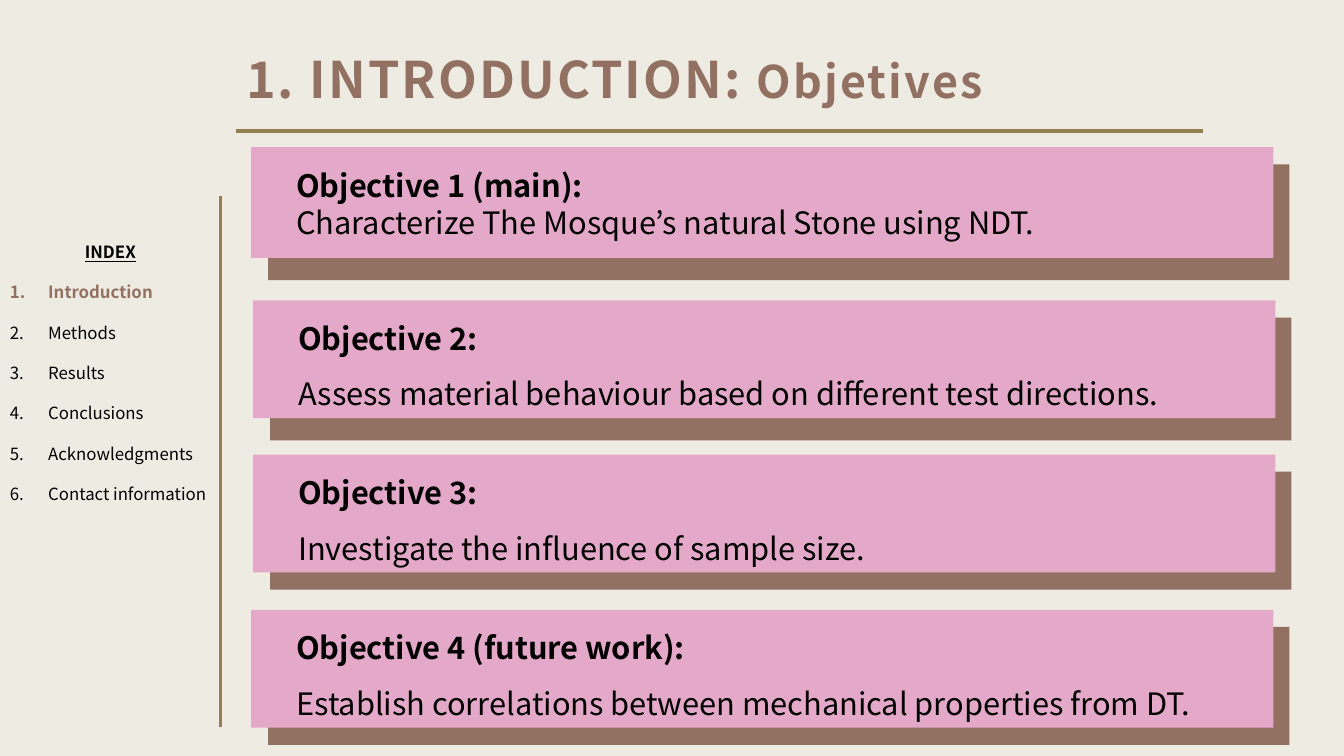
from lxml import etree
from pptx import Presentation, util as u
from pptx.dml.color import RGBColor
from pptx.enum import shapes, text
from pptx.oxml.ns import qn

HUES = {"back": "EEEBE2", "brown": "927162", "pink": "E4A9C9",
        "gold": "947F53", "ink": "000000"}
FONT = "Noto Sans CJK JP"
INDEX = ["Introduction", "Methods", "Results", "Conclusions",
         "Acknowledgments", "Contact information"]
GOALS = [
    (2.49, 1.46, 1.1, 1.15, 1, "Objective 1 (main):",
     "Characterize The Mosque’s natural Stone using NDT."),
    (2.51, 2.98, 1.17, 1.22, 1.5, "Objective 2:",
     "Assess material behaviour based on different test directions."),
    (2.51, 4.51, 1.17, 1.17, 1.5, "Objective 3:",
     "Investigate the influence of sample size."),
    (2.49, 6.05, 1.17, 1.17, 1.5, "Objective 4 (future work):",
     "Establish correlations between mechanical properties from DT."),
]


def hue(name):
    """Return the named colour."""
    return RGBColor.from_string(HUES[name])


def put(item, **values):
    """Set each given attribute on an item."""
    for key, value in values.items():
        setattr(item, key, value)


def write(para, words, size, tone="ink", **style):
    """Add a formatted run to a paragraph."""
    run = para.add_run()
    run.text = words
    put(run.font, name=FONT, size=u.Pt(size), **style)
    run.font.color.rgb = hue(tone)
    return run


def add_rect(slide, tone, *box):
    """Draw a plain filled rectangle."""
    rect = slide.shapes.add_shape(shapes.MSO_SHAPE.RECTANGLE, *map(u.Inches, box))
    rect.shadow.inherit = False
    rect.fill.solid()
    rect.fill.fore_color.rgb = hue(tone)
    rect.line.fill.background()


def add_rule(slide, *ends):
    """Draw a gold rule between two points."""
    rule = slide.shapes.add_connector(
        shapes.MSO_CONNECTOR.STRAIGHT, *map(u.Inches, ends))
    rule.line.color.rgb = hue("gold")
    rule.line.width = u.Pt(2.25)
    etree.SubElement(rule._element.spPr, qn("a:effectLst"))


def add_box(slide, *box):
    """Add a wrapping text box and return its frame."""
    frame = slide.shapes.add_textbox(*map(u.Inches, box)).text_frame
    frame.word_wrap = True
    return frame


def add_title(slide):
    """Fill and place the title."""
    title = slide.shapes.title
    put(title, left=u.Inches(2.34), top=u.Inches(0.25),
        width=u.Inches(9.59), height=u.Inches(1.3))
    frame = title.text_frame
    put(frame, word_wrap=True, auto_size=text.MSO_AUTO_SIZE.NONE,
        vertical_anchor=text.MSO_ANCHOR.TOP)
    para = frame.paragraphs[0]
    put(para, alignment=text.PP_ALIGN.LEFT, line_spacing=1.3,
        space_before=u.Pt(0))
    for words, size in (("1. INTRODUCTION: ", 36), ("Objetives", 32)):
        run = write(para, words, size, "brown", bold=True)
        run.font._element.set("spc", "150")


def add_index(slide, now):
    """List the numbered sections, marking the current one."""
    frame = add_box(slide, 0, 2.15, 2.19, 2.88)
    head = frame.paragraphs[0]
    put(head, alignment=text.PP_ALIGN.CENTER, line_spacing=2.0)
    write(head, "INDEX", 12, bold=True, underline=True)
    for name in INDEX:
        para = frame.add_paragraph()
        para.line_spacing = 2.0
        props = para._p.get_or_add_pPr()
        props.set("marL", str(u.Inches(0.38)))
        props.set("indent", str(-u.Inches(0.38)))
        etree.SubElement(props, qn("a:buAutoNum"), type="arabicPeriod")
        write(para, name, 12, "brown" if name == now else "ink", bold=name == now)


def add_goal(slide, left, top, high, deep, gap, head, body):
    """Draw one objective card with its offset backing and text."""
    add_rect(slide, "brown", left + 0.17, top + 0.17, 10.13, deep)
    add_rect(slide, "pink", left, top, 10.14, high)
    frame = add_box(slide, left + 0.35, top - 0.04, 9.76, 1.17)
    first, last = frame.paragraphs[0], frame.add_paragraph()
    put(first, line_spacing=1.5)
    put(last, line_spacing=float(gap))
    write(first, head, 22, bold=True)
    write(last, body, 22)


def main():
    """Build and save the slide."""
    deck = Presentation()
    put(deck, slide_width=u.Inches(13.33), slide_height=u.Inches(7.5))
    slide = deck.slides.add_slide(deck.slide_layouts[5])
    slide.background.fill.solid()
    slide.background.fill.fore_color.rgb = hue("back")
    add_title(slide)
    add_rule(slide, 2.34, 1.3, 11.93, 1.3)
    add_rule(slide, 2.19, 1.94, 2.19, 7.21)
    add_index(slide, "Introduction")
    for goal in GOALS:
        add_goal(slide, *goal)
    deck.save("out.pptx")


main()
